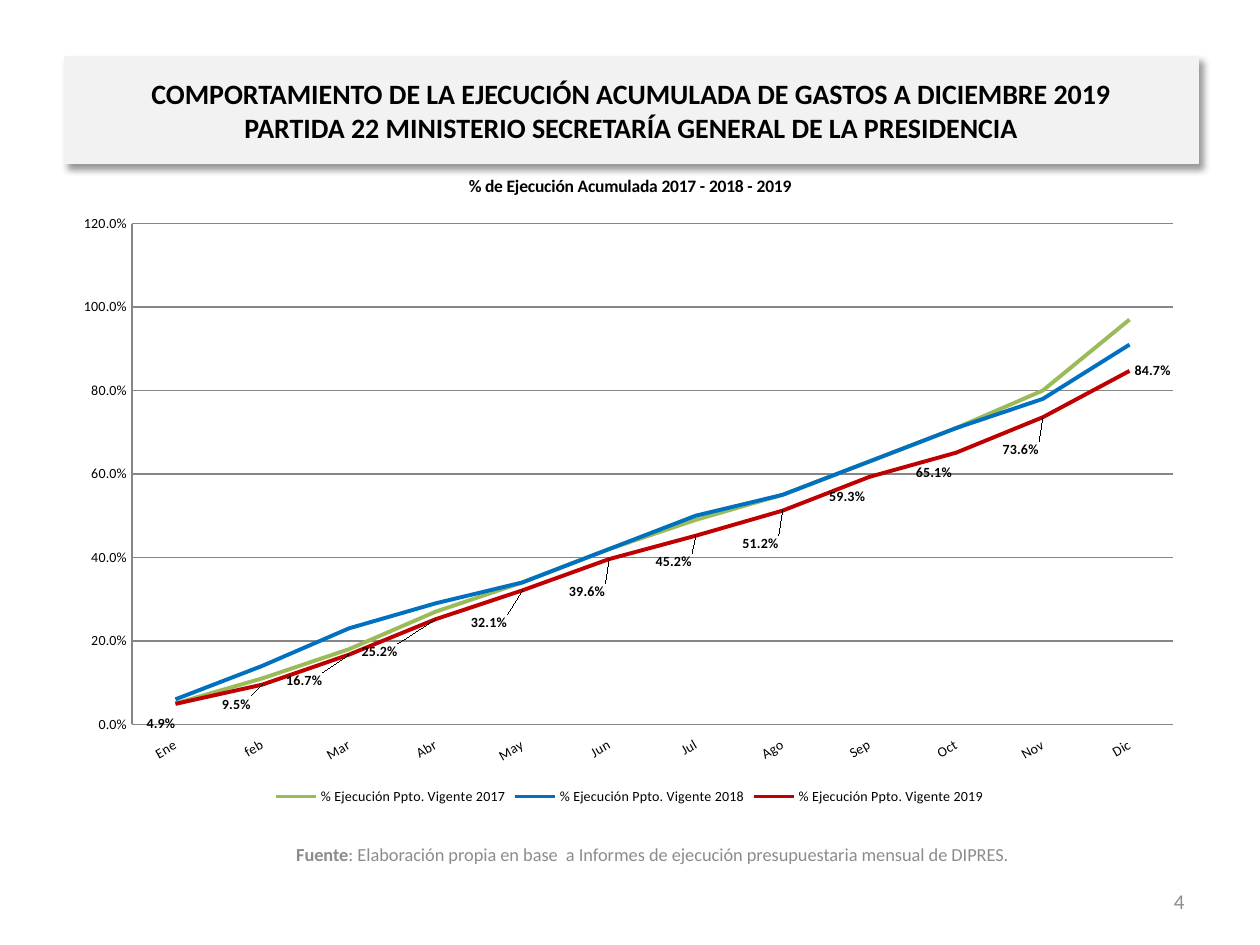
from lxml.etree import SubElement, fromstring
from pptx import Presentation
from pptx.chart.data import CategoryChartData
from pptx.dml.color import RGBColor
from pptx.enum.chart import XL_CHART_TYPE as ChartType, XL_LABEL_POSITION as LabelPos
from pptx.enum.chart import XL_LEGEND_POSITION as LegendPos, XL_TICK_LABEL_POSITION as TickPos
from pptx.enum.chart import XL_TICK_MARK as TickMark
from pptx.enum.shapes import MSO_SHAPE as Preset
from pptx.enum.text import MSO_ANCHOR as Anchor, PP_ALIGN as Align
from pptx.oxml.ns import nsdecls, qn
from pptx.util import Inches, Pt

COLUMNS, ROWS = 100, 75
FONT = "Calibri"
BLACK, GRAY, PALE, AXIS = "000000", "8C8C8C", "F2F2F2", "868686"
PERCENT = "0.0%"

MONTHS = "Ene feb Mar Abr May Jun Jul Ago Sep Oct Nov Dic".split()
EXECUTION = {
    "2017": ("9BBB59", (0.05, 0.11, 0.18, 0.27, 0.34, 0.42, 0.49, 0.55, 0.63, 0.71, 0.8, 0.97)),
    "2018": ("0070C0", (0.06, 0.14, 0.23, 0.29, 0.34, 0.42, 0.5, 0.55, 0.63, 0.71, 0.78, 0.91)),
    "2019": ("C00000", (0.049, 0.095, 0.167, 0.252, 0.321, 0.396,
                        0.452, 0.512, 0.593, 0.651, 0.736, 0.847)),
}
LABEL_SHIFTS = [(-0.03, 0.03), (-0.04, 0.03), (-0.06, 0.04), (-0.07, 0.05),
                (-0.05, 0.05), (-0.04, 0.05), (-0.04, 0.04), (-0.04, 0.05),
                (-0.04, 0.03), (-0.04, 0.03), (-0.04, 0.05)]


def color(value):
    return RGBColor.from_string(value)


def apply(target, formats):
    for name, value in formats.items():
        setattr(target, name, value)


def manual_layout(**values):
    layout = fromstring(f"<c:layout {nsdecls('c')}/>")
    manual = SubElement(layout, qn("c:manualLayout"))
    for name, value in values.items():
        SubElement(manual, qn(f"c:{name}")).set("val", str(value))
    return layout


class BudgetSlide:
    def __init__(self, deck):
        self.slide = deck.slides.add_slide(deck.slide_layouts[6])
        self.cell = deck.slide_width // COLUMNS, deck.slide_height // ROWS

    def place(self, left, top, width, height):
        column, row = self.cell
        return [int(n * unit) for n, unit in
                zip((left, top, width, height), (column, row, column, row))]

    def font(self, font, size, ink=BLACK, bold=False):
        apply(font, {"name": FONT, "size": Pt(size), "bold": bold})
        font.color.rgb = color(ink)

    def fill_text(self, frame, lines, size, ink, align):
        apply(frame, {"word_wrap": True, "vertical_anchor": Anchor.MIDDLE})
        paragraph = frame.paragraphs[0]
        paragraph.alignment = align
        for number, line in enumerate(lines):
            if number:
                paragraph.add_line_break()
            for words, bold in line:
                run = paragraph.add_run()
                run.text = words
                self.font(run.font, size, ink, bold)

    def text(self, area, lines, size, ink=GRAY, align=Align.CENTER):
        box = self.slide.shapes.add_textbox(*self.place(*area))
        self.fill_text(box.text_frame, lines, size, ink, align)

    def banner(self, area, lines, size):
        panel = self.slide.shapes.add_shape(Preset.RECTANGLE, *self.place(*area))
        panel.shadow.inherit = False
        panel.fill.solid()
        panel.fill.fore_color.rgb = color(PALE)
        panel.line.color.rgb = color(PALE)
        panel.line.width = Pt(0.75)
        effects = panel._element.spPr.find(qn("a:effectLst"))
        effects.append(fromstring(
            f'<a:outerShdw {nsdecls("a")} blurRad="{Pt(4)}" dist="{Pt(3)}" dir="2700000" '
            'algn="tl" rotWithShape="0"><a:srgbClr val="000000"><a:alpha val="40000"/>'
            '</a:srgbClr></a:outerShdw>'))
        self.fill_text(panel.text_frame, lines, size, BLACK, Align.CENTER)

    def axis(self, axis, formats):
        apply(axis, {"major_tick_mark": TickMark.NONE, "minor_tick_mark": TickMark.NONE, **formats})
        self.font(axis.tick_labels.font, 8)
        axis.format.line.color.rgb = color(AXIS)

    def shift_labels(self, series, shifts):
        for point, (x, y) in enumerate(shifts):
            label = series.points[point].data_label
            label.position = LabelPos.RIGHT
            self.font(label.font, 8, bold=True)
            node = series._element.findall(f".//{qn('c:dLbl')}")[point]
            node.insert(1, manual_layout(x=x, y=y))
            node.insert(2, fromstring(
                f'<c:numFmt {nsdecls("c")} formatCode="{PERCENT}" sourceLinked="0"/>'))

    def line_chart(self, area, title):
        data = CategoryChartData(number_format=PERCENT)
        data.categories = MONTHS
        for year, (_, shares) in EXECUTION.items():
            data.add_series(f"% Ejecución Ppto. Vigente {year}", shares)
        chart = self.slide.shapes.add_chart(ChartType.LINE, *self.place(*area), data).chart
        self.font(chart.font, 10)

        heading = chart.chart_title.text_frame
        heading.text = title
        self.font(heading.paragraphs[0].runs[0].font, 10, bold=True)
        chart.has_legend = True
        apply(chart.legend, {"position": LegendPos.BOTTOM, "include_in_layout": False})
        self.font(chart.legend.font, 8)

        months, shares = chart.category_axis, chart.value_axis
        self.axis(months, {"tick_label_position": TickPos.LOW, "has_major_gridlines": False})
        months._element.find(f"{qn('c:txPr')}/{qn('a:bodyPr')}").set("rot", "-1800000")
        self.axis(shares, {"minimum_scale": 0, "maximum_scale": 1.2, "major_unit": 0.2,
                           "has_major_gridlines": True})
        shares.major_gridlines.format.line.color.rgb = color(AXIS)
        apply(shares.tick_labels, {"number_format": PERCENT, "number_format_is_linked": False})

        for series, (ink, _) in zip(chart.plots[0].series, EXECUTION.values()):
            series.smooth = False
            series.format.line.color.rgb = color(ink)
            series.format.line.width = Pt(2.25)
        labels = series.data_labels
        apply(labels, {"show_value": True, "number_format": PERCENT,
                       "number_format_is_linked": False, "position": LabelPos.RIGHT})
        self.font(labels.font, 8, bold=True)
        self.shift_labels(series, LABEL_SHIFTS)

        plot_area = chart._chartSpace.chart.plotArea
        for automatic in plot_area.findall(qn("c:layout")):
            plot_area.remove(automatic)
        plot_area.insert(0, manual_layout(layoutTarget="inner", xMode="edge", yMode="edge",
                                          x=0.06, y=0.11, w=0.92, h=0.76))


def main():
    deck = Presentation()
    apply(deck, {"slide_width": Inches(10), "slide_height": Inches(7.5)})
    page = BudgetSlide(deck)
    page.banner((5.1, 4.5, 90, 8.5), [
        [("COMPORTAMIENTO DE LA EJECUCIÓN ACUMULADA DE GASTOS A DICIEMBRE 2019", True)],
        [("PARTIDA 22 MINISTERIO SECRETARÍA GENERAL DE LA PRESIDENCIA", True)],
    ], 16)
    page.line_chart((5.1, 12, 89.8, 52.3), "% de Ejecución Acumulada 2017 - 2018 - 2019")
    page.text((10.6, 65.8, 82.4, 4), [[
        ("Fuente", True),
        (": Elaboración propia en base  a Informes de ejecución presupuestaria mensual de DIPRES.",
         False),
    ]], 10.5)
    page.text((71.7, 69.5, 23.3, 4), [[("4", False)]], 12, align=Align.RIGHT)
    deck.save("out.pptx")


if __name__ == "__main__":
    main()
